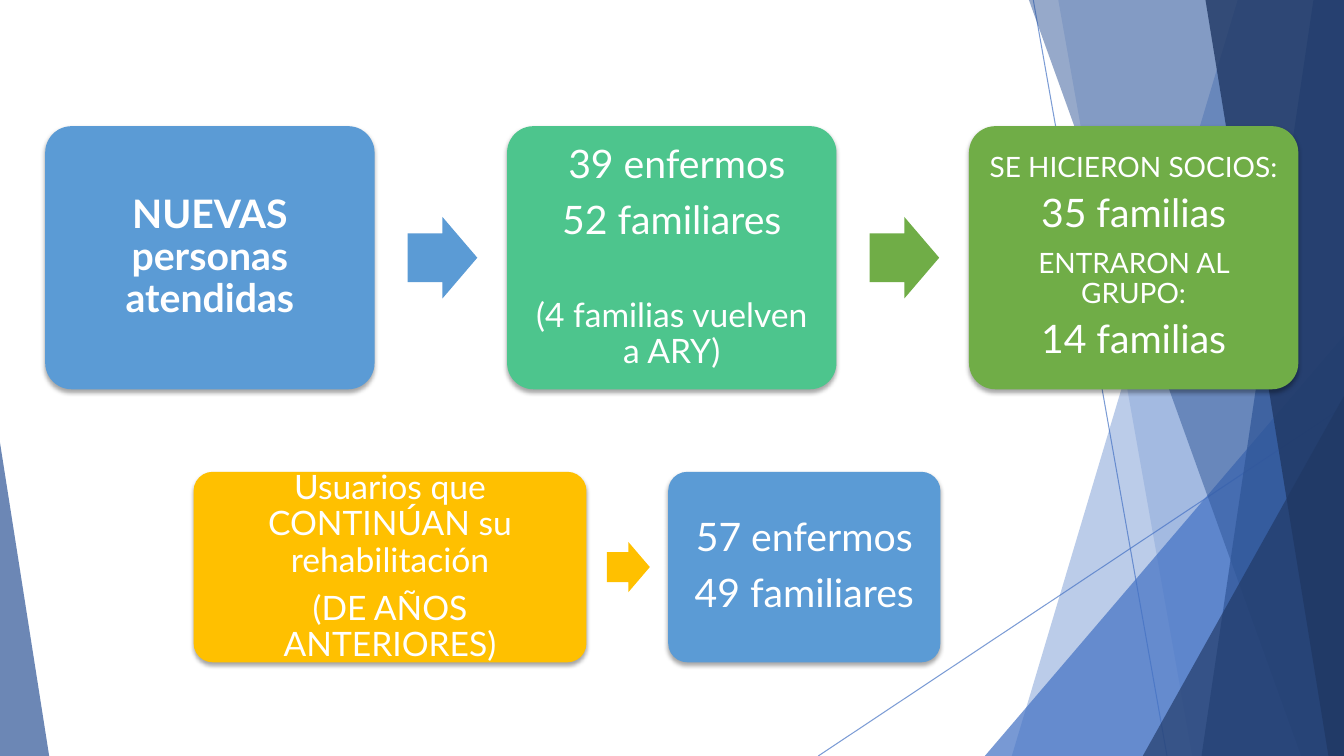
import pptx
import pptx.util
import pptx.dml.color
import pptx.enum.shapes
import pptx.enum.text
import pptx.oxml
import pptx.oxml.ns

Cm, Pt = pptx.util.Cm, pptx.util.Pt
KIND = pptx.enum.shapes.MSO_SHAPE
WIDE, HIGH = 33.87, 19.05
FONT = "Lato"
INK = {
    "white": "FFFFFF", "blue": "5B9BD5", "mint": "4DC58D", "green": "70AD47",
    "gold": "FFC000", "royal": "4472C4", "navy": "2F5597", "night": "203864",
}

# Background: start and end of each thin line
RAYS = [((26.04, 0), (29.41, HIGH)), ((WIDE, 10.24), (20.62, HIGH))]
# "fan": x at top, x at foot; "tri": left, top, width, apex
FACETS = [
    ("fan", (31.19, 25.5), "royal", 36),
    ("fan", (26.67, 30.05), "royal", 20),
    ("tri", (24.82, 8.46, 9.05, 1), "royal", 72),
    ("fan", (25.93, 32.79), "navy", 50),
    ("fan", (33.1, 30.28), "navy", 70),
    ("fan", (30.38, 33.48), "night", 80),
    ("tri", (28.8, 9.98, 5.07, 1), "night", 66),
    ("tri", (0, 11.15, 1.24, 0), "navy", 70),
]

# Card: left, width, colour, inset, bold, lines of (text, size, space before)
ROWS = [
    {"top": 3.18, "high": 6.63, "arrows": ["blue", "green"], "cards": [
        (1.14, 8.3, "blue", 0.3, True, [("NUEVAS personas atendidas", 28, 0)]),
        (12.78, 8.3, "mint", 0.25, False, [
            (" 39 enfermos", 28, 0), ("52 familiares", 28, 0),
            ("(4 familias vuelven a ARY)", 24, 30)]),
        (24.42, 8.3, "green", 0.2, False, [
            ("SE HICIERON SOCIOS:", 20, 0), ("35 familias", 28, 0),
            ("ENTRARON AL GRUPO:", 20, 0), ("14 familias", 28, 0)]),
    ]},
    {"top": 11.89, "high": 4.8, "arrows": ["gold"], "cards": [
        (4.88, 9.9, "gold", 0.25, False, [
            ("Usuarios que CONTINÚAN su rehabilitación", 24, 0),
            ("(DE AÑOS ANTERIORES)", 24, 0)]),
        (16.84, 6.86, "blue", 0.3, False, [
            ("57 enfermos", 28, 0), ("49 familiares", 28, 0)]),
    ]},
]
SHADE = (
    '<a:effectLst %s><a:outerShdw blurRad="38100" dist="25400" dir="5400000">'
    '<a:srgbClr val="000000"><a:alpha val="35000"/></a:srgbClr>'
    '</a:outerShdw></a:effectLst>' % pptx.oxml.ns.nsdecls("a"))


def rgb(name):
    return pptx.dml.color.RGBColor.from_string(INK[name])


def fade(shape, alpha):
    """Set the opacity, in percent, of the shape's first colour."""
    tone = shape._element.spPr.find(".//" + pptx.oxml.ns.qn("a:srgbClr"))
    tone.append(pptx.oxml.parse_xml('<a:alpha %s val="%d"/>' % (
        pptx.oxml.ns.nsdecls("a"), alpha * 1000)))


def paint(shape, tone):
    shape.shadow.inherit = False
    shape.fill.solid()
    shape.fill.fore_color.rgb = rgb(tone)
    shape.line.fill.background()


def add(kind, left, top, wide, high, tone, *knobs):
    shape = shapes.add_shape(kind, Cm(left), Cm(top), Cm(wide), Cm(high))
    for i, knob in enumerate(knobs):
        shape.adjustments[i] = knob
    paint(shape, tone)
    return shape


def draw_ray(start, end):
    ray = shapes.add_connector(pptx.enum.shapes.MSO_CONNECTOR.STRAIGHT,
                               *map(Cm, start + end))
    ray.line.color.rgb = rgb("royal")
    ray.line.width = Pt(0.75)
    fade(ray, 70)
    ray._element.spPr.append(pptx.oxml.parse_xml(
        "<a:effectLst %s/>" % pptx.oxml.ns.nsdecls("a")))


def draw_facet(kind, dims, tone, alpha):
    if kind == "tri":
        left, top, wide, apex = dims
        facet = add(KIND.ISOSCELES_TRIANGLE, left, top, wide, HIGH - top, tone, apex)
    else:
        head, foot = dims
        path = shapes.build_freeform(Cm(head), 0)
        path.add_line_segments([(Cm(x), Cm(y)) for x, y in (
            (WIDE, 0), (WIDE, HIGH), (foot, HIGH))])
        facet = path.convert_to_shape()
        paint(facet, tone)
    fade(facet, alpha)


def draw_card(top, high, left, wide, tone, inset, bold, lines):
    card = add(KIND.ROUNDED_RECTANGLE, left, top, wide, high, tone, 0.1)
    props = card._element.spPr
    props.remove(props.find(pptx.oxml.ns.qn("a:effectLst")))
    props.append(pptx.oxml.parse_xml(SHADE))
    frame = card.text_frame
    frame.word_wrap = True
    frame.vertical_anchor = pptx.enum.text.MSO_ANCHOR.MIDDLE
    frame.margin_left = frame.margin_right = Cm(inset)
    frame.margin_top = frame.margin_bottom = Cm(inset)
    for i, (text, size, gap) in enumerate(lines):
        para = frame.add_paragraph() if i else frame.paragraphs[0]
        para.text = text
        para.alignment = pptx.enum.text.PP_ALIGN.CENTER
        para.line_spacing = 0.9
        if gap:
            para.space_before = Pt(gap)
        para.space_after = Pt(0.35 * size)
        para.font.name = FONT
        para.font.size = Pt(size)
        para.font.bold = bold
        para.font.color.rgb = rgb("white")


def draw_row(top, high, arrows, cards):
    for card in cards:
        draw_card(top, high, *card)
    for tone, prev, card in zip(arrows, cards, cards[1:]):
        edge = prev[0] + prev[1]
        gap = card[0] - edge
        wide = 0.525 * gap
        tall = 1.17 * wide
        add(KIND.RIGHT_ARROW, edge + gap / 4, top + (high - tall) / 2,
            wide, tall, tone, 0.6, 0.5)


deck = pptx.Presentation()
deck.slide_width, deck.slide_height = Cm(WIDE), Cm(HIGH)
shapes = deck.slides.add_slide(deck.slide_layouts[6]).shapes
for ray in RAYS:
    draw_ray(*ray)
for facet in FACETS:
    draw_facet(*facet)
for row in ROWS:
    draw_row(**row)
deck.save("out.pptx")
